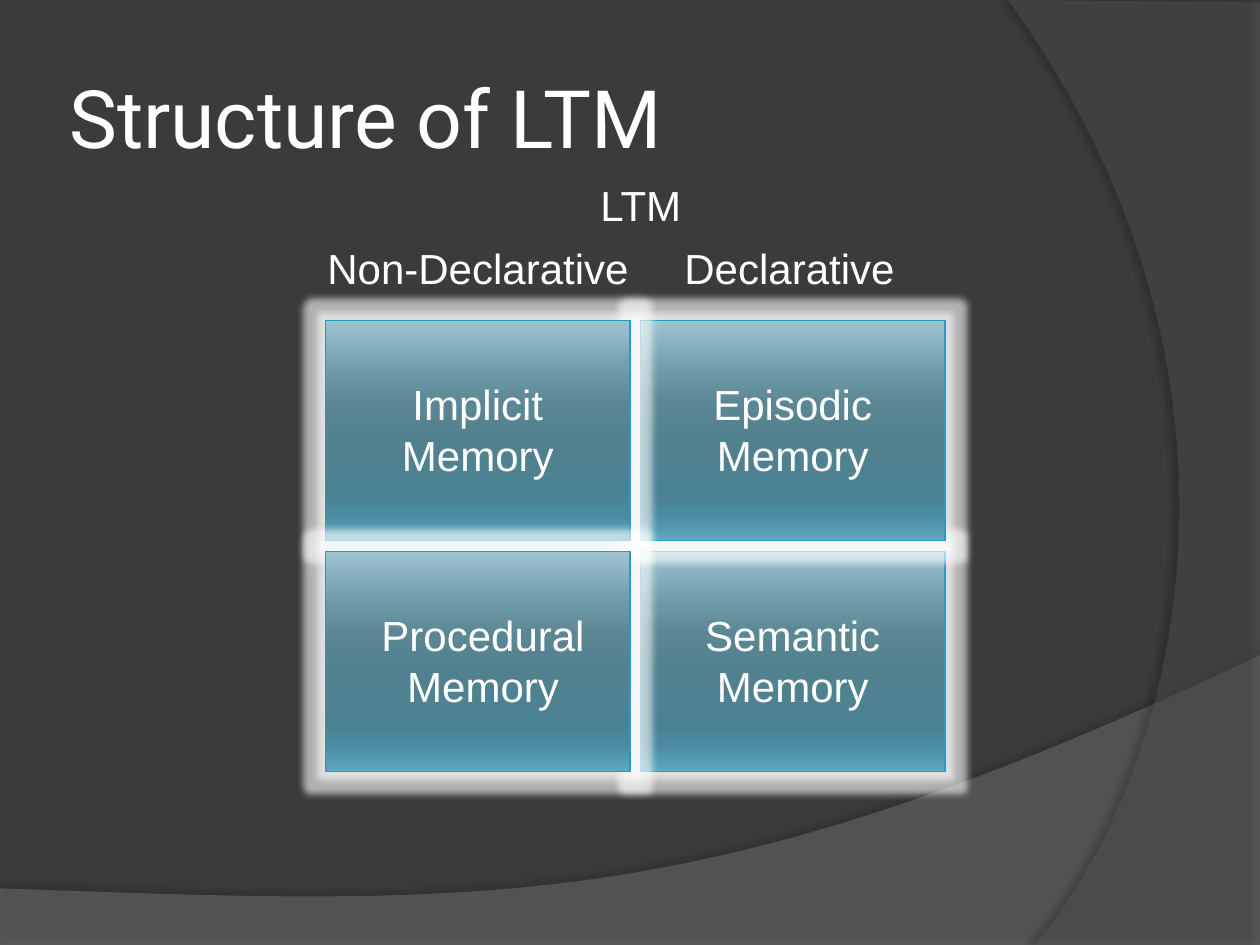
from dataclasses import dataclass
from lxml.etree import SubElement
from pptx import Presentation
from pptx.dml.color import RGBColor
from pptx.enum.shapes import MSO_SHAPE
from pptx.enum.text import MSO_ANCHOR, MSO_AUTO_SIZE, PP_ALIGN
from pptx.oxml.ns import qn
from pptx.util import Pt


@dataclass(frozen=True)
class Theme:
    back: str = "3B3B3B"
    text: str = "FFFFFF"
    edge: str = "239BC2"
    glow: str = "FFFFFF"
    shade: str = "000000"
    wave: str = "7C7C7C"
    arc: str = "595959"
    stops: tuple = ((0, "9EC4D2"), (25, "6C97A5"), (38, "5B8694"), (55, "51808F"),
                    (80, "4A8294"), (88, "4A8BA0"), (100, "5DAAC2"))
    head: str = "Roboto"
    body: str = "Arial"
    title: int = 46
    label: int = 24


def rgb(code):
    return RGBColor.from_string(code)


def node(base, tag, **attrs):
    return SubElement(base, qn(tag), {k: str(v) for k, v in attrs.items()})


def tint(base, code, alpha):
    node(node(base, "a:srgbClr", val=code), "a:alpha", val=alpha * 1000)


def curve(start, one, two, end, steps=48):
    return [tuple((1 - t) ** 3 * a + 3 * (1 - t) ** 2 * t * b + 3 * (1 - t) * t * t * c + t ** 3 * d
                  for a, b, c, d in zip(start, one, two, end))
            for t in (i / steps for i in range(1, steps + 1))]


class Painter:
    """Draws styled elements on one slide."""

    def __init__(self, slide, theme):
        self.slide, self.theme = slide, theme
        fill = slide.background.fill
        fill.solid()
        fill.fore_color.rgb = rgb(theme.back)

    def swoosh(self, points, color, alpha, shade, dist, angle):
        spots = [(Pt(x), Pt(y)) for x, y in points]
        pen = self.slide.shapes.build_freeform(*spots[0])
        pen.add_line_segments(spots[1:], close=True)
        shape = pen.convert_to_shape()
        shape.fill.solid()
        shape.fill.fore_color.rgb = rgb(color)
        code = shape.element.spPr.find(qn("a:solidFill"))[0]
        node(code, "a:alpha", val=alpha * 1000)
        shape.line.fill.background()
        fx = node(shape.element.spPr, "a:effectLst")
        cast = node(fx, "a:outerShdw", blurRad=Pt(4), dist=Pt(dist),
                    dir=angle * 60000, algn="ctr", rotWithShape=0)
        tint(cast, self.theme.shade, shade)

    def tile(self, x, y, w, h):
        shape = self.slide.shapes.add_shape(MSO_SHAPE.RECTANGLE, Pt(x), Pt(y), Pt(w), Pt(h))
        shape.fill.gradient()
        shape.fill.gradient_angle = 270
        stops = shape.element.spPr.find(qn("a:gradFill")).find(qn("a:gsLst"))
        for old in list(stops):
            stops.remove(old)
        for pos, code in self.theme.stops:
            node(node(stops, "a:gs", pos=pos * 1000), "a:srgbClr", val=code)
        shape.line.color.rgb = rgb(self.theme.edge)
        shape.line.width = Pt(0.75)
        fx = node(shape.element.spPr, "a:effectLst")
        tint(node(fx, "a:glow", rad=Pt(8)), self.theme.glow, 60)

    def label(self, text, x, y, w, h, wrap=True, align=PP_ALIGN.LEFT):
        box = self.slide.shapes.add_textbox(Pt(x), Pt(y), Pt(w), Pt(h))
        frame = box.text_frame
        frame.word_wrap = wrap
        frame.auto_size = MSO_AUTO_SIZE.SHAPE_TO_FIT_TEXT
        frame.text = text
        para = frame.paragraphs[0]
        para.alignment = align
        font = para.font
        font.name, font.size = self.theme.body, Pt(self.theme.label)
        font.color.rgb = rgb(self.theme.text)
        return frame

    def title(self, text, x, y, w, h):
        frame = self.label(text, x, y, w, h)
        frame.auto_size = MSO_AUTO_SIZE.NONE
        frame.vertical_anchor = MSO_ANCHOR.MIDDLE
        frame.margin_left = frame.margin_right = Pt(3.6)
        font = frame.paragraphs[0].font
        font.name, font.size = self.theme.head, Pt(self.theme.title)


def main():
    deck = Presentation()
    deck.slide_width, deck.slide_height = Pt(720), Pt(540)
    theme = Theme()
    art = Painter(deck.slides.add_slide(deck.slide_layouts[6]), theme)

    wave = curve((720, 374.4), (402.5, 524.9), (281.5, 517.7), (0, 507.6))
    art.swoosh([(0, 507.6), (0, 540.7), (720, 540.7), (720, 374.4)] + wave[:-1],
               theme.wave, 45, 35, 3.5, 270)
    arc = curve((591.1, 540), (673.2, 445.7), (733, 216), (576, 0))
    art.swoosh([(720, 1.4), (720, 540), (591.1, 540)] + arc, theme.arc, 40, 45, 4, 180)

    art.title("Structure of LTM", 36, 21.6, 588, 90)
    for text, x, y, w in (("LTM", 336, 99, 61),
                          ("Declarative", 384, 135, 136),
                          ("Non-Declarative", 180, 135, 188)):
        art.label(text, x, y, w, 36.4, wrap=False)

    for text, col, row, w in (("Semantic Memory", 1, 1, 126),
                              ("Episodic Memory", 1, 0, 126),
                              ("Implicit Memory", 0, 0, 126),
                              ("Procedural Memory", 0, 1, 132)):
        x, y = 186 + 180 * col, 183 + 132 * row
        art.tile(x, y, 174, 126)
        art.label(text, x + 24, y + 30, w, 65.4, align=PP_ALIGN.CENTER)

    deck.save("out.pptx")


if __name__ == "__main__":
    main()
